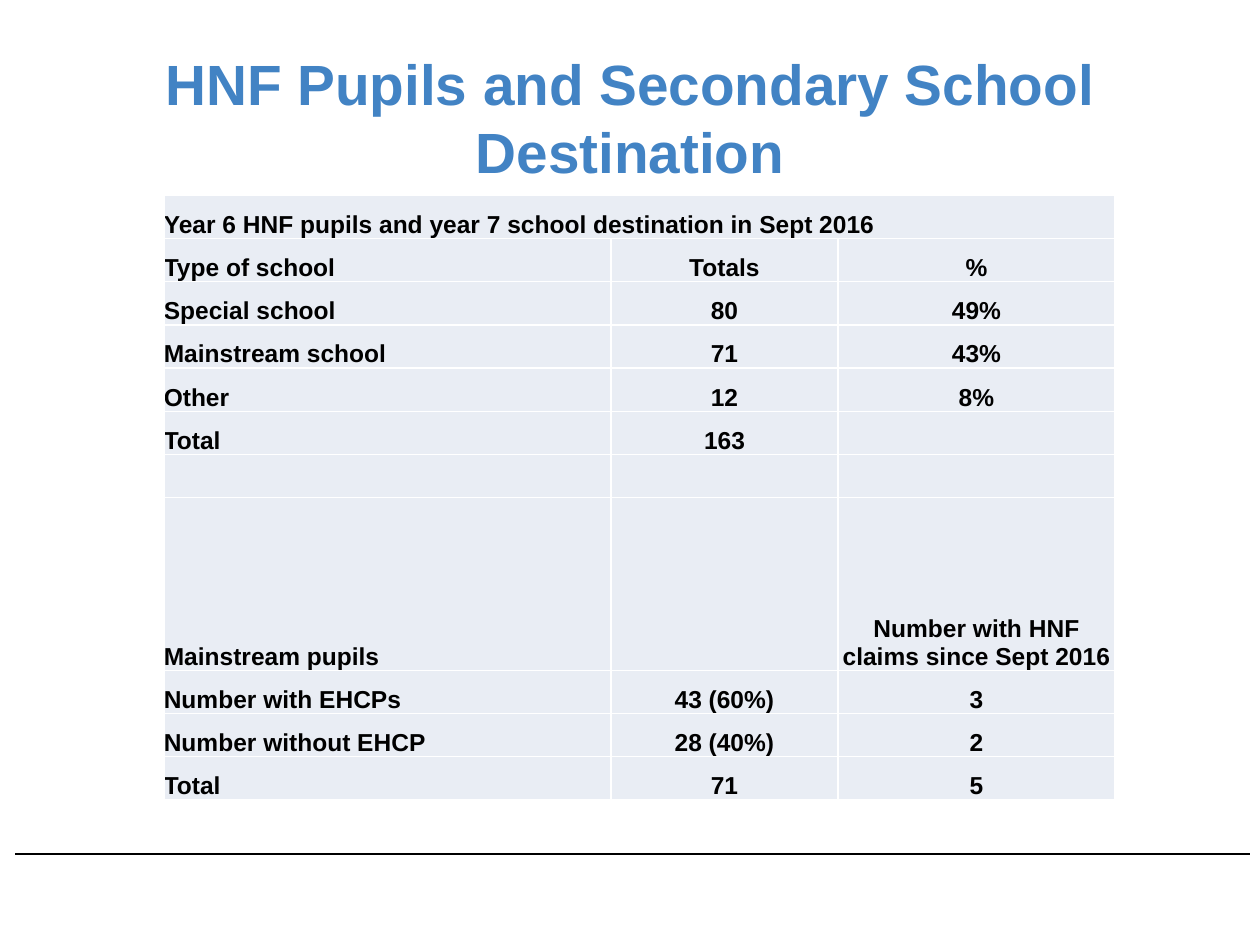
from dataclasses import dataclass

from lxml.etree import SubElement
from pptx import Presentation
from pptx.dml.color import RGBColor
from pptx.enum.shapes import MSO_CONNECTOR as Connector
from pptx.enum.text import MSO_ANCHOR as Anchor, MSO_AUTO_SIZE as AutoSize, PP_ALIGN as Align
from pptx.oxml.ns import qn
from pptx.util import Inches, Pt


@dataclass(frozen=True)
class Theme:
    font: str = "Arial"
    heading: RGBColor = RGBColor(0x42, 0x83, 0xC4)
    ink: RGBColor = RGBColor(0, 0, 0)
    band: RGBColor = RGBColor(0xE9, 0xED, 0xF4)
    border: RGBColor = RGBColor(0xFF, 0xFF, 0xFF)
    heading_size: float = 32.4
    table_size: float = 14


theme = Theme()


def add_text(paragraph, text, size, color, align):
    paragraph.alignment = align
    run = paragraph.add_run()
    run.text = text
    run.font.name = theme.font
    run.font.size = Pt(size)
    run.font.bold = True
    run.font.color.rgb = color


def add_borders(cell):
    properties = cell._tc.get_or_add_tcPr()
    for side in ("a:lnL", "a:lnR", "a:lnT", "a:lnB"):
        line = SubElement(properties, qn(side), w=str(Pt(1)))
        fill = SubElement(line, qn("a:solidFill"))
        SubElement(fill, qn("a:srgbClr"), val=str(theme.border))


prs = Presentation()
prs.slide_width, prs.slide_height = Inches(10), Inches(7.5)
slide = prs.slides.add_slide(prs.slide_layouts[5])

footer_rule = slide.shapes.add_connector(
    Connector.STRAIGHT, Inches(0.12), Inches(6.78), Inches(9.92), Inches(6.78)
)
footer_rule.line.color.rgb = theme.ink
footer_rule.line.width = Pt(1)
SubElement(footer_rule._element.spPr, qn("a:effectLst"))

heading = slide.shapes.title
heading.left, heading.top = Inches(0.5), Inches(0.3)
heading.width, heading.height = Inches(9), Inches(1.25)
heading.text_frame.word_wrap = True
heading.text_frame.auto_size = AutoSize.NONE
heading.text_frame.vertical_anchor = Anchor.MIDDLE
add_text(
    heading.text_frame.paragraphs[0],
    "HNF Pupils and Secondary School Destination",
    theme.heading_size, theme.heading, Align.CENTER,
)

destinations = [
    ("Year 6 HNF pupils and year 7 school destination in Sept 2016", "", ""),
    ("Type of school", "Totals", "%"),
    ("Special school", "80", "49%"),
    ("Mainstream school", "71", "43%"),
    ("Other", "12", "8%"),
    ("Total", "163", ""),
    ("", "", ""),
    ("Mainstream pupils", "", "Number with HNF claims since Sept 2016"),
    ("Number with EHCPs", "43 (60%)", "3"),
    ("Number without EHCP", "28 (40%)", "2"),
    ("Total", "71", "5"),
]
column_widths = (3.55, 1.8, 2.2)
row_height, mainstream_height = 0.343, 1.37
mainstream_row = 7

table = slide.shapes.add_table(
    len(destinations), len(column_widths),
    Inches(1.3), Inches(1.55), Inches(sum(column_widths)), Inches(4.8),
).table
table.first_row = table.horz_banding = False
for column, width in zip(table.columns, column_widths):
    column.width = Inches(width)

for row_index, values in enumerate(destinations):
    is_mainstream = row_index == mainstream_row
    table.rows[row_index].height = Inches(mainstream_height if is_mainstream else row_height)
    for column_index, value in enumerate(values):
        cell = table.cell(row_index, column_index)
        cell.margin_left = cell.margin_right = cell.margin_top = cell.margin_bottom = 0
        cell.vertical_anchor = Anchor.BOTTOM
        add_borders(cell)
        cell.fill.solid()
        cell.fill.fore_color.rgb = theme.band
        if value:
            align = Align.CENTER if column_index else Align.LEFT
            add_text(cell.text_frame.paragraphs[0], value, theme.table_size, theme.ink, align)

table.cell(0, 0).merge(table.cell(0, 2))

prs.save("out.pptx")
